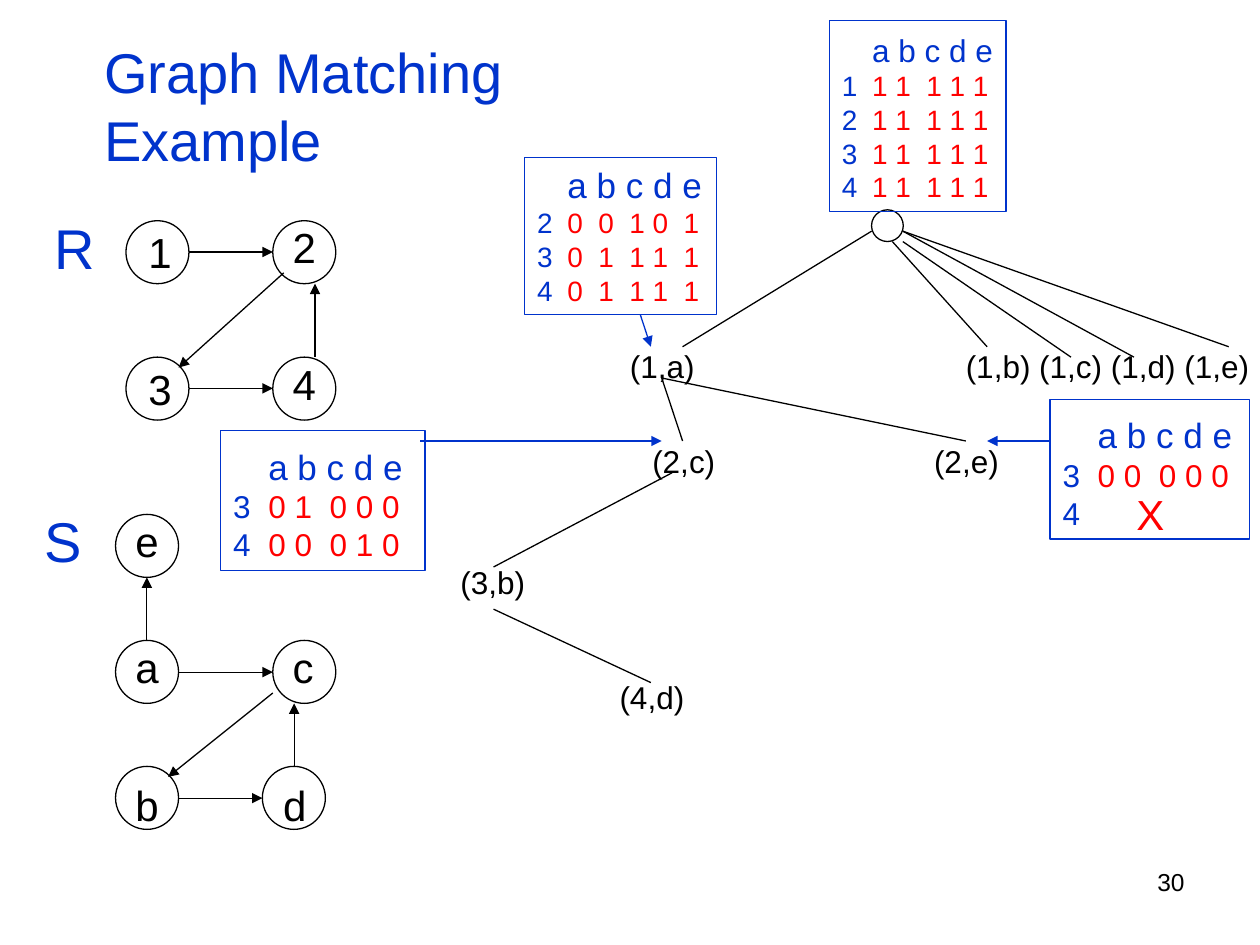
"""Build the graph matching example slide with two graphs and a search tree."""
from dataclasses import dataclass

from lxml.etree import SubElement
from pptx import Presentation
from pptx.dml.color import RGBColor
from pptx.enum.shapes import MSO_CONNECTOR, MSO_SHAPE
from pptx.enum.text import MSO_ANCHOR, PP_ALIGN
from pptx.oxml.ns import qn
from pptx.util import Cm, Pt

COLORS = {"black": "000000", "blue": "0033CC", "red": "FF0000"}
FONT = "Arial"
NODE = 1.27
LINE_RATIO = 1.2


@dataclass
class Label:
    text: str
    x: float
    y: float
    w: float
    h: float
    size: int
    color: str = "black"
    align: PP_ALIGN = PP_ALIGN.LEFT


@dataclass
class Node:
    name: str
    x: float
    y: float
    dx: float
    dy: float


@dataclass
class Edge:
    x1: float
    y1: float
    x2: float
    y2: float
    color: str = "black"
    arrow: bool = False


@dataclass
class Matrix:
    x: float
    y: float
    w: float
    h: float
    head_size: int
    head_line: int
    row_size: int
    indent: float
    rows: list[tuple[str, str]]


LABELS = [
    Label("30", 18.21, 17.35, 5.67, 1.32, 14, align=PP_ALIGN.RIGHT),
    Label("Graph Matching Example", 1.85, 0.64, 11, 2.96, 32, "blue"),
    Label("R", 0.84, 4.17, 1.32, 1.6, 32, "blue"),
    Label("S", 0.64, 10.08, 1.27, 1.6, 32, "blue"),
    Label("(1,a)", 12.45, 6.88, 1.8, 1.02, 18),
    Label("(1,b) (1,c) (1,d) (1,e)", 19.22, 6.88, 6.16, 1.02, 18),
    Label("(2,c)", 12.9, 8.79, 1.8, 1.02, 18),
    Label("(2,e)", 18.58, 8.79, 1.8, 1.02, 18),
    Label("(3,b)", 9.03, 11.23, 1.8, 1.02, 18),
    Label("(4,d)", 12.24, 13.54, 1.8, 1.02, 18),
    Label("X", 22.66, 9.73, 1.09, 1.3, 24, "red"),
]

NODES = [
    Node("1", 2.54, 4.45, 0.2, 0),
    Node("2", 5.5, 4.45, 0.15, -0.1),
    Node("3", 2.54, 7.2, 0.2, 0),
    Node("4", 5.5, 7.2, 0.15, -0.1),
    Node("e", 2.33, 10.37, 0.15, -0.1),
    Node("a", 2.33, 12.91, 0.15, -0.1),
    Node("b", 2.33, 15.45, 0.15, 0.13),
    Node("c", 5.5, 12.91, 0.15, -0.1),
    Node("d", 5.29, 15.45, 0.17, 0.13),
]

GRAPH_EDGES = [
    (3.81, 5.08, 5.5, 5.08), (5.72, 5.5, 3.6, 7.41),
    (6.35, 7.2, 6.35, 5.72), (3.81, 7.83, 5.5, 7.83),
    (2.96, 12.91, 2.96, 11.64), (3.6, 13.55, 5.5, 13.55),
    (5.93, 15.45, 5.93, 14.18), (5.5, 13.97, 3.39, 15.66),
    (3.6, 16.09, 5.29, 16.09),
]
TREE_EDGES = [
    (17.57, 4.66, 13.76, 6.99), (17.99, 4.87, 19.9, 6.99),
    (18.2, 4.87, 21.59, 7.2), (18.2, 4.66, 22.86, 7.2),
    (18.2, 4.66, 24.77, 6.99), (13.34, 7.62, 13.76, 8.89),
    (13.34, 7.62, 19.47, 8.89), (13.55, 9.53, 9.95, 11.43),
    (9.95, 12.28, 13.12, 13.76),
]
MATRIX_ARROWS = [
    (12.91, 6.35, 13.12, 6.99), (8.47, 8.89, 13.34, 8.89),
    (21.17, 8.89, 19.9, 8.89),
]
EDGES = (
    [Edge(*e, arrow=True) for e in GRAPH_EDGES]
    + [Edge(*e) for e in TREE_EDGES]
    + [Edge(*e, color="blue", arrow=True) for e in MATRIX_ARROWS]
)

MATRICES = [
    Matrix(16.72, 0.42, 3.56, 3.84, 18, 20, 16, 0.61,
           [(n, "1 1  1 1 1") for n in "1234"]),
    Matrix(10.58, 3.18, 3.86, 3.16, 20, 20, 16, 0.61,
           [("2", "0  0  1 0  1"), ("3", "0  1  1 1  1"), ("4", "0  1  1 1  1")]),
    Matrix(4.45, 8.68, 4.12, 2.82, 20, 24, 18, 0.71,
           [("3", "0 1  0 0 0"), ("4", "0 0  0 1 0")]),
    Matrix(21.17, 8.05, 4.02, 2.82, 20, 24, 18, 0.71,
           [("3", "0 0  0 0 0"), ("4", "")]),
]


def rgb(color: str) -> RGBColor:
    """Return the named colour."""
    return RGBColor.from_string(COLORS[color])


def style_run(r, size: int, color: str) -> None:
    """Set font, size and colour of a run."""
    r.font.name, r.font.size = FONT, Pt(size)
    r.font.color.rgb = rgb(color)


def add_label(s, label: Label) -> None:
    """Draw a one-run text box."""
    sp = s.shapes.add_textbox(Cm(label.x), Cm(label.y), Cm(label.w), Cm(label.h))
    tf = sp.text_frame
    tf.word_wrap = True
    tf.margin_right = Cm(0)
    tf.text = label.text
    p = tf.paragraphs[0]
    p.alignment = label.align
    style_run(p.runs[0], label.size, label.color)


def add_outline(s, kind: MSO_SHAPE, x: float, y: float, w: float, h: float, color: str):
    """Draw an unfilled shape with a thin line."""
    sp = s.shapes.add_shape(kind, Cm(x), Cm(y), Cm(w), Cm(h))
    sp.shadow.inherit = False
    sp.fill.background()
    sp.line.color.rgb, sp.line.width = rgb(color), Pt(0.75)
    return sp


def add_node(s, node: Node) -> None:
    """Draw a graph node and its name."""
    add_outline(s, MSO_SHAPE.OVAL, node.x, node.y, NODE, NODE, "black")
    add_label(s, Label(node.name, node.x + node.dx, node.y + node.dy, 0.98, NODE, 24))


def add_edge(s, edge: Edge) -> None:
    """Draw a straight line, with an arrowhead if asked."""
    ends = (Cm(v) for v in (edge.x1, edge.y1, edge.x2, edge.y2))
    c = s.shapes.add_connector(MSO_CONNECTOR.STRAIGHT, *ends)
    c.line.color.rgb, c.line.width = rgb(edge.color), Pt(0.75)
    if edge.arrow:
        SubElement(c.line._get_or_add_ln(), qn("a:tailEnd"), type="triangle")
    SubElement(c._element.spPr, qn("a:effectLst"))


def add_matrix(s, m: Matrix) -> None:
    """Draw a boxed matrix with column heads and row names."""
    sp = add_outline(s, MSO_SHAPE.RECTANGLE, m.x, m.y, m.w, m.h, "blue")
    tf = sp.text_frame
    tf.word_wrap = True
    tf.vertical_anchor = MSO_ANCHOR.TOP
    for i, (name, values) in enumerate([("", "a b c d e"), *m.rows]):
        p = tf.paragraphs[0] if i == 0 else tf.add_paragraph()
        p.alignment = PP_ALIGN.LEFT
        p.line_spacing = Pt((m.row_size if i else m.head_line) * LINE_RATIO)
        pPr = p._p.get_or_add_pPr()
        pPr.set("marL", str(Cm(m.indent)))
        pPr.set("indent", str(-Cm(m.indent) if i else 0))
        cells = [(f"{name}\t" if values else name, "blue"),
                 (values, "red" if i else "blue")]
        for text, color in cells if i else cells[1:]:
            if text:
                r = p.add_run()
                r.text = text
                style_run(r, m.row_size if i else m.head_size, color)


def main() -> None:
    """Build and save the slide."""
    prs = Presentation()
    prs.slide_width, prs.slide_height = Cm(25.4), Cm(19.05)
    s = prs.slides.add_slide(prs.slide_layouts[6])
    for node in NODES:
        add_node(s, node)
    add_outline(s, MSO_SHAPE.OVAL, 17.57, 4.23, 0.64, 0.64, "black")
    for m in MATRICES:
        add_matrix(s, m)
    for edge in EDGES:
        add_edge(s, edge)
    for label in LABELS:
        add_label(s, label)
    prs.save("out.pptx")


if __name__ == "__main__":
    main()
